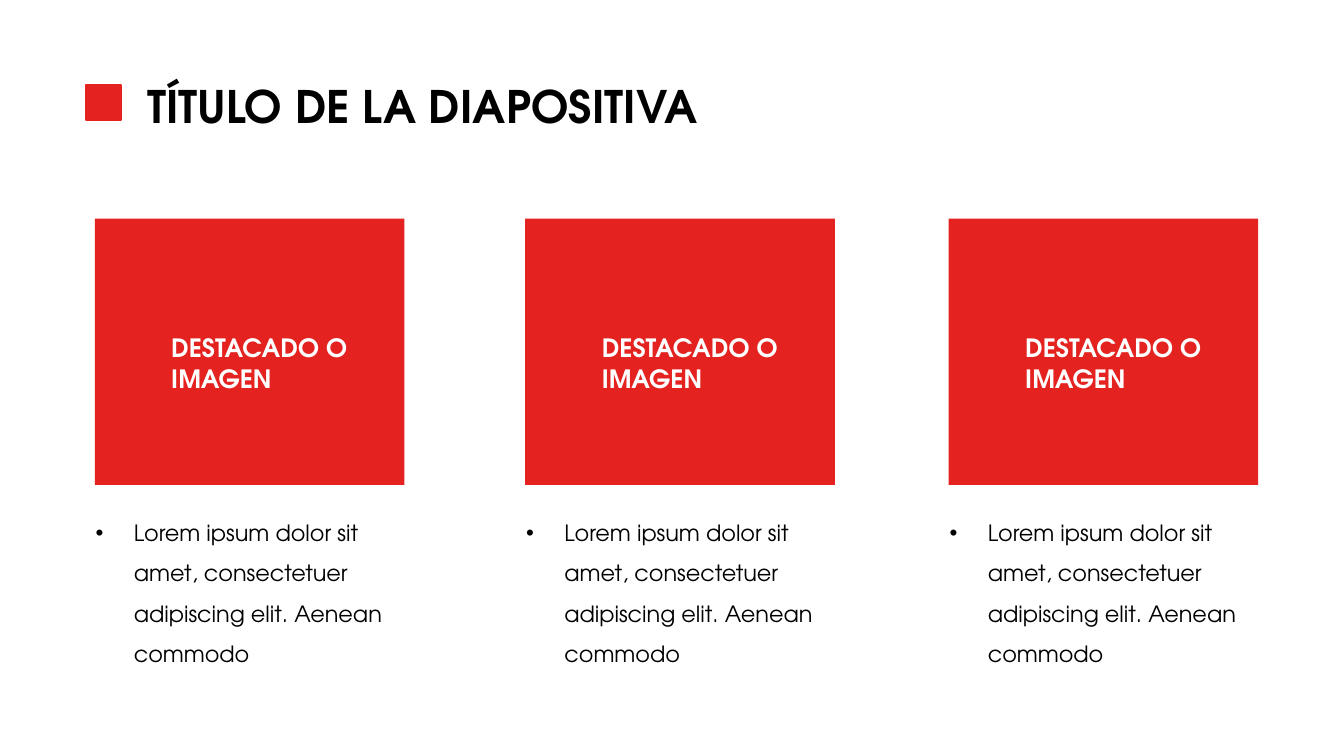
from lxml.etree import SubElement as Sub
from pptx import Presentation as Deck
from pptx.dml.color import RGBColor as Color
from pptx.enum.shapes import MSO_SHAPE as Kind
from pptx.enum.text import MSO_ANCHOR as Anchor, MSO_AUTO_SIZE as Fit, PP_ALIGN as Align
from pptx.oxml.ns import qn
from pptx.util import Pt

PX = 9144
FONT = "TeX Gyre Adventor"
COLORS = {"red": "E4221F", "black": "000000", "white": "FFFFFF"}
LEFTS = [94, 521, 941]
LABEL = "DESTACADO O IMAGEN"
BODY = "Lorem ipsum dolor sit amet, consectetuer adipiscing elit. Aenean commodo"


def scale(*sides):
    return [side * PX for side in sides]


def tint(name):
    return Color.from_string(COLORS[name])


def write(frame, text, size=16, color="black", bold=False, space=1.0, indent=0):
    frame.word_wrap = True
    frame.auto_size = Fit.NONE
    frame.vertical_anchor = Anchor.TOP
    para = frame.paragraphs[0]
    para.alignment = Align.LEFT
    para.line_spacing = space
    run = para.add_run()
    run.text = text
    font = run.font
    font.name, font.size, font.bold = FONT, Pt(size), bold
    font.color.rgb = tint(color)
    if indent:
        props = para._p.get_or_add_pPr()
        props.set("marL", str(indent * PX))
        props.set("indent", str(-indent * PX))
        Sub(props, qn("a:buFont"), typeface="Arial")
        Sub(props, qn("a:buChar"), char="•")


def add_title(slide, text):
    title = slide.shapes.title
    title.left, title.top, title.width, title.height = scale(136, 73, 904, 64)
    write(title.text_frame, text, size=32, bold=True)


def add_block(slide, box, line=0):
    block = slide.shapes.add_shape(Kind.RECTANGLE, *scale(*box))
    block.shadow.inherit = False
    block.fill.solid()
    block.fill.fore_color.rgb = tint("red")
    if line:
        block.line.color.rgb = tint("red")
        block.line.width = Pt(line)
    else:
        block.line.fill.background()


def add_text(slide, box, text, **style):
    area = slide.shapes.add_textbox(*scale(*box))
    write(area.text_frame, text, **style)


def add_card(slide, left):
    add_block(slide, (left, 217, 307, 264))
    add_text(slide, (left + 66, 325, 195, 71), LABEL, size=18, color="white", bold=True)
    add_text(slide, (left - 9, 497, 343, 170), BODY, space=1.5, indent=38)


def main():
    deck = Deck()
    deck.slide_width, deck.slide_height = scale(1333, 750)
    slide = deck.slides.add_slide(deck.slide_layouts[5])
    add_title(slide, "TÍTULO DE LA DIAPOSITIVA")
    add_block(slide, (85, 84, 35, 35), line=1.5)
    for left in LEFTS:
        add_card(slide, left)
    deck.save("out.pptx")


if __name__ == "__main__":
    main()
